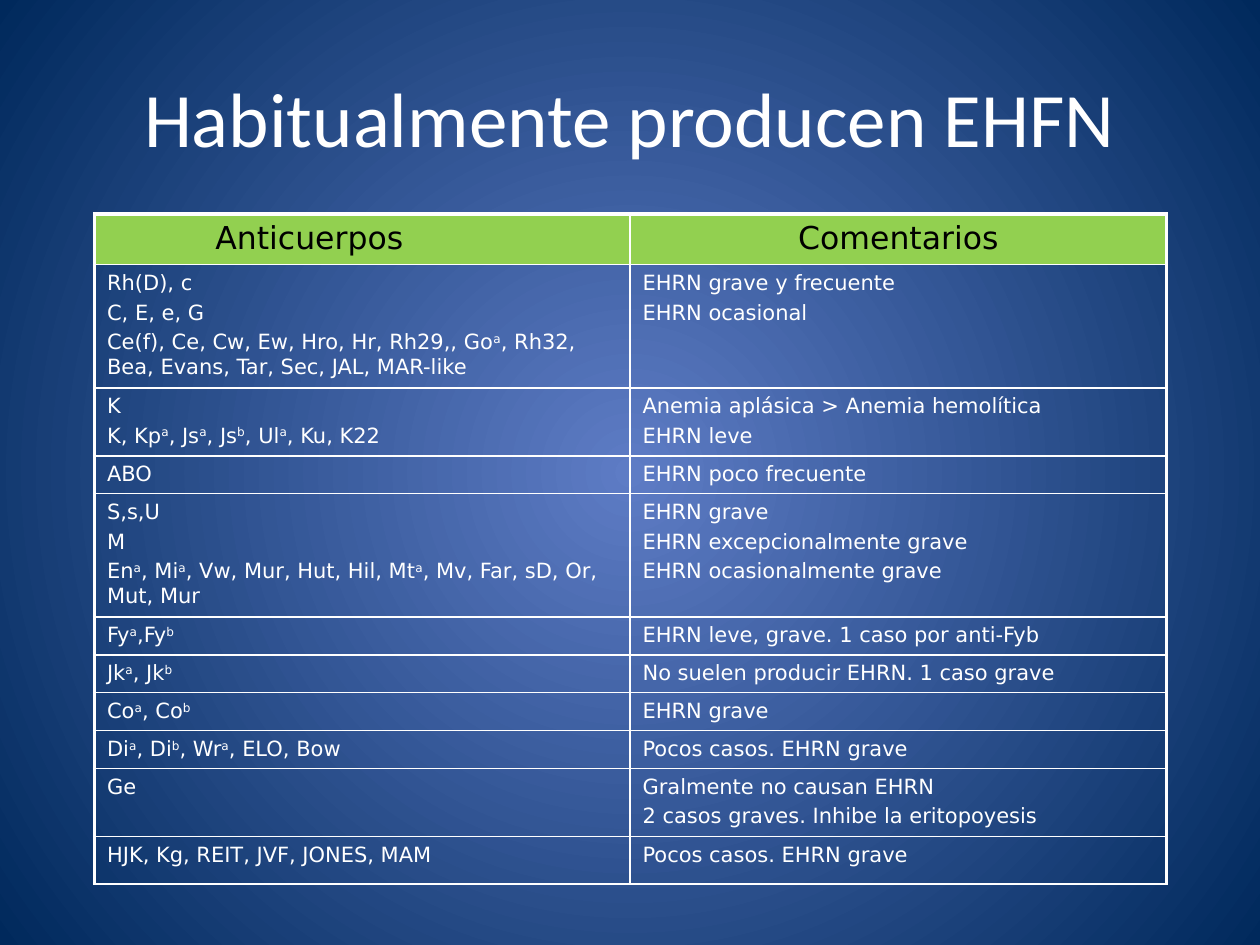
from lxml.etree import SubElement
from pptx import Presentation
from pptx.dml.color import RGBColor
from pptx.enum.text import MSO_VERTICAL_ANCHOR as Anchor, PP_PARAGRAPH_ALIGNMENT as Align
from pptx.oxml.ns import qn
from pptx.util import Inches, Pt

WHITE = RGBColor(0xFF, 0xFF, 0xFF)
BLACK = RGBColor(0x00, 0x00, 0x00)
GREEN = RGBColor(0x92, 0xD0, 0x50)
LIGHT_BLUE = RGBColor(0x5E, 0x7C, 0xC5)
DARK_BLUE = RGBColor(0x00, 0x29, 0x5C)

COLUMN_WIDTHS = [4.25, 4.26]
HEADINGS = ["Anticuerpos", "Comentarios"]
ROWS = [
    (0.95, ["Rh(D), c", "C, E, e, G",
            "Ce(f), Ce, Cw, Ew, Hro, Hr, Rh29,, Go^a^, Rh32, Bea, Evans, Tar, Sec, JAL, MAR-like"],
     ["EHRN grave y frecuente", "EHRN ocasional"]),
    (0.52, ["K", "K, Kp^a^, Js^a^, Js^b^, Ul^a^, Ku, K22"],
     ["Anemia aplásica > Anemia hemolítica", "EHRN leve"]),
    (0.3, ["ABO"], ["EHRN poco frecuente"]),
    (0.95, ["S,s,U", "M", "En^a^, Mi^a^, Vw, Mur, Hut, Hil, Mt^a^, Mv, Far, sD, Or, Mut, Mur"],
     ["EHRN grave", "EHRN excepcionalmente grave", "EHRN ocasionalmente grave"]),
    (0.3, ["Fy^a^,Fy^b^"], ["EHRN leve, grave. 1 caso por anti-Fyb"]),
    (0.3, ["Jk^a^, Jk^b^"], ["No suelen producir EHRN. 1 caso grave"]),
    (0.3, ["Co^a^, Co^b^"], ["EHRN grave"]),
    (0.3, ["Di^a^, Di^b^, Wr^a^, ELO, Bow"], ["Pocos casos. EHRN grave"]),
    (0.52, ["Ge"], ["Gralmente no causan EHRN", "2 casos graves. Inhibe la eritopoyesis"]),
    (0.38, ["HJK, Kg, REIT, JVF, JONES, MAM"], ["Pocos casos. EHRN grave"]),
]


class SlideBuilder:
    title_font = "Calibri"
    table_font = "DejaVu Sans"
    thin, thick = 1, 2.25

    def __init__(self, deck):
        self.page = deck.slides.add_slide(deck.slide_layouts[6])

    def radial_background(self, inner, outer):
        fill = self.page.background.fill
        fill.gradient()
        for stop, position, color in zip(fill.gradient_stops, (0, 1), (inner, outer)):
            stop.position = position
            stop.color.rgb = color
        gradient = self.page.element.find(".//" + qn("a:gradFill"))
        gradient.remove(gradient.find(qn("a:lin")))
        circle = SubElement(gradient, qn("a:path"), path="circle")
        SubElement(circle, qn("a:fillToRect"), l="50000", t="50000", r="50000", b="50000")

    def add_text(self, frame, lines, font, size, color, align=Align.LEFT):
        frame.word_wrap = True
        for index, line in enumerate(lines):
            para = frame.add_paragraph() if index else frame.paragraphs[0]
            para.alignment = align
            if index:
                para.space_before = Pt(2.8)
            for order, piece in enumerate(line.split("^")):
                if not piece:
                    continue
                span = para.add_run()
                span.text = piece
                span.font.name = font
                span.font.size = Pt(size)
                span.font.color.rgb = color
                if order % 2:
                    span.font._element.set("baseline", "30000")

    def title(self, text, left, top, width, height):
        box = self.page.shapes.add_textbox(Inches(left), Inches(top), Inches(width), Inches(height))
        box.text_frame.vertical_anchor = Anchor.MIDDLE
        self.add_text(box.text_frame, [text], self.title_font, 44, WHITE, Align.CENTER)

    def borders(self, cell, widths):
        properties = cell._tc.get_or_add_tcPr()
        for side, width in zip("LRTB", widths):
            line = SubElement(properties, qn(f"a:ln{side}"), w=str(Pt(width)))
            solid = SubElement(line, qn("a:solidFill"))
            SubElement(solid, qn("a:srgbClr"), val=str(WHITE))

    def table(self, left, top, column_widths, headings, header_height, rows):
        heights = [header_height] + [row[0] for row in rows]
        table = self.page.shapes.add_table(
            len(heights), len(column_widths), Inches(left), Inches(top),
            Inches(sum(column_widths)), Inches(sum(heights))).table
        table.first_row = table.horz_banding = False
        for column, width in zip(table.columns, column_widths):
            column.width = Inches(width)
        for row, height in zip(table.rows, heights):
            row.height = Inches(height)

        last = len(column_widths) - 1
        contents = [[[heading] for heading in headings]] + [row[1:] for row in rows]
        for r, texts in enumerate(contents):
            for c, lines in enumerate(texts):
                cell = table.cell(r, c)
                outer = (c == 0, c == last, r == 0, False)
                self.borders(cell, [self.thick if edge else self.thin for edge in outer])
                if r == 0:
                    cell.fill.solid()
                    cell.fill.fore_color.rgb = GREEN
                    align = Align.CENTER if c else Align.LEFT
                    self.add_text(cell.text_frame, lines, self.table_font, 18, BLACK, align)
                else:
                    cell.fill.background()
                    self.add_text(cell.text_frame, lines, self.table_font, 12, WHITE)
        table.cell(0, 0).margin_left = Inches(0.96)


def main():
    deck = Presentation()
    deck.slide_width, deck.slide_height = Inches(10), Inches(7.5)
    slide = SlideBuilder(deck)
    slide.radial_background(LIGHT_BLUE, DARK_BLUE)
    slide.title("Habitualmente producen EHFN", 0.5, 0.3, 9, 1.25)
    slide.table(0.75, 1.7, COLUMN_WIDTHS, HEADINGS, 0.39, ROWS)
    deck.save("out.pptx")


if __name__ == "__main__":
    main()
